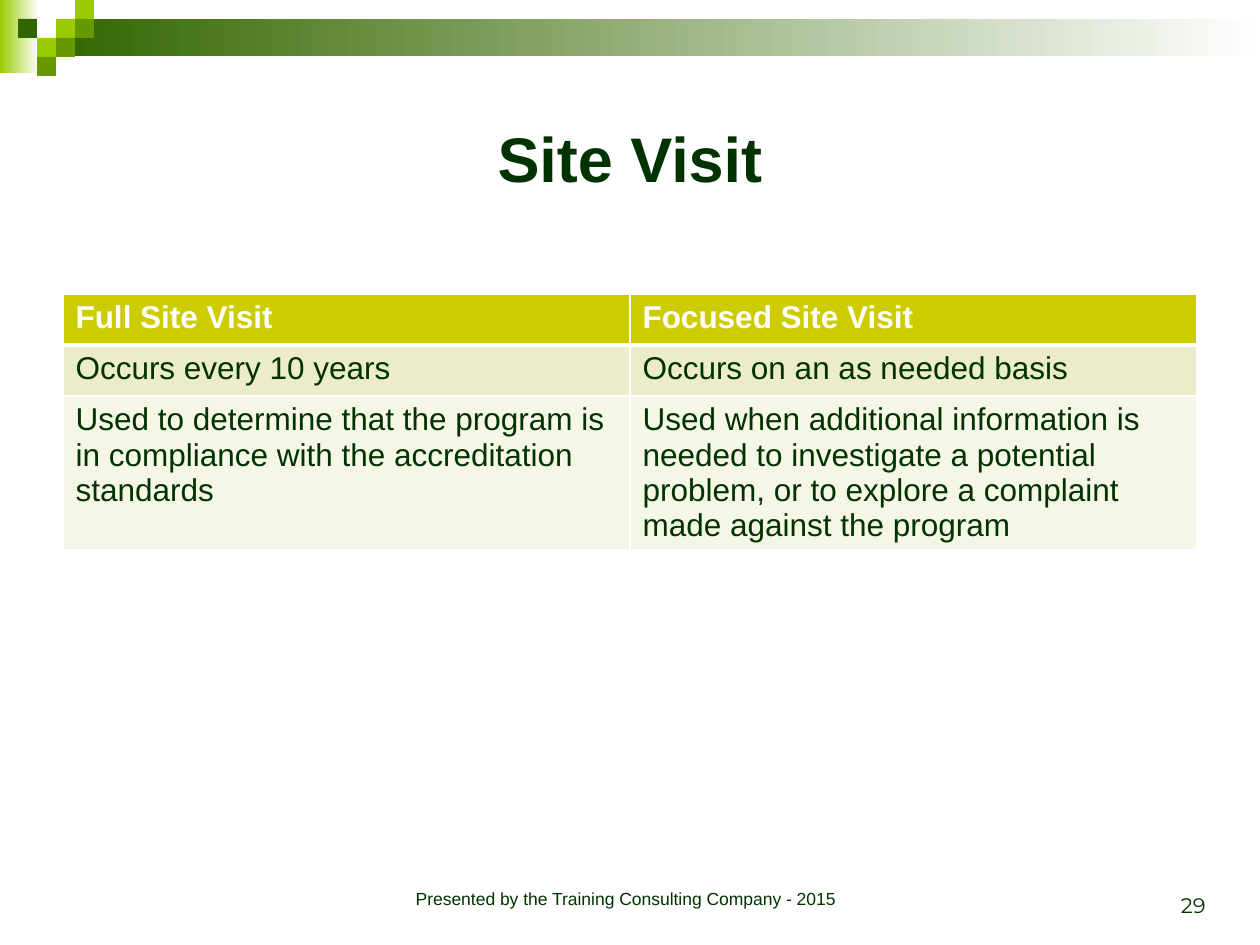
from dataclasses import dataclass

from lxml.etree import SubElement
from pptx import Presentation
from pptx.dml.color import RGBColor
from pptx.enum.shapes import MSO_SHAPE
from pptx.enum.text import MSO_ANCHOR, MSO_AUTO_SIZE, PP_ALIGN
from pptx.oxml.ns import qn
from pptx.util import Pt

EMU_PER_PX = 914400 / 126


@dataclass(frozen=True)
class Theme:
    font: str = "Arial"
    number_font: str = "Montserrat"
    ink: str = "003300"
    white: str = "FFFFFF"
    lime: str = "99CC00"
    leaf: str = "669900"
    forest: str = "336600"
    header: str = "CCCC00"
    bands: tuple = ("ECECCC", "F6F6E7")
    title_size: int = 36
    table_size: int = 18
    number_size: int = 12
    footer_size: int = 10


def px(*lengths):
    return [round(length * EMU_PER_PX) for length in lengths]


def write(frame, text, *, size, color, font, bold=False,
          align=PP_ALIGN.LEFT, anchor=MSO_ANCHOR.TOP):
    frame.word_wrap = True
    frame.vertical_anchor = anchor
    paragraph = frame.paragraphs[0]
    paragraph.alignment = align
    run = paragraph.add_run()
    run.text = text
    run.font.size = Pt(size)
    run.font.name = font
    run.font.bold = bold
    run.font.color.rgb = RGBColor.from_string(color)


class SlideBuilder:
    def __init__(self, slide, theme):
        self.slide = slide
        self.theme = theme

    def block(self, box, color, fade_to=None):
        shape = self.slide.shapes.add_shape(MSO_SHAPE.RECTANGLE, *px(*box))
        shape.shadow.inherit = False
        shape.line.fill.background()
        if fade_to is None:
            shape.fill.solid()
            shape.fill.fore_color.rgb = RGBColor.from_string(color)
            return
        shape.fill.gradient()
        shape.fill.gradient_angle = 0
        for stop, position, shade in zip(shape.fill.gradient_stops, (0, 1), (color, fade_to)):
            stop.position = position
            stop.color.rgb = RGBColor.from_string(shade)

    def title(self, text, box):
        heading = self.slide.shapes.title
        heading.left, heading.top, heading.width, heading.height = px(*box)
        heading.text_frame.auto_size = MSO_AUTO_SIZE.NONE
        write(heading.text_frame, text, size=self.theme.title_size, color=self.theme.ink,
              font=self.theme.font, bold=True, align=PP_ALIGN.CENTER, anchor=MSO_ANCHOR.MIDDLE)

    def label(self, text, box, **style):
        frame = self.slide.shapes.add_textbox(*px(*box)).text_frame
        write(frame, text, color=self.theme.ink, **style)

    def borders(self, cell, bottom_width):
        properties = cell._tc.get_or_add_tcPr()
        sides = {"lnL": 1, "lnR": 1, "lnT": 1, "lnB": bottom_width}
        for index, (side, width) in enumerate(sides.items()):
            line = SubElement(properties, qn(f"a:{side}"), w=str(Pt(width)))
            fill = SubElement(line, qn("a:solidFill"))
            SubElement(fill, qn("a:srgbClr"), val=self.theme.white)
            properties.insert(index, line)  # lines come before the fill

    def table(self, rows, box, row_heights):
        grid = self.slide.shapes.add_table(len(rows), len(rows[0]), *px(*box)).table
        for r, (texts, height) in enumerate(zip(rows, row_heights)):
            is_header = r == 0
            grid.rows[r].height = px(height)[0]
            fill = self.theme.header if is_header else self.theme.bands[(r - 1) % 2]
            for c, text in enumerate(texts):
                cell = grid.cell(r, c)
                cell.fill.solid()
                cell.fill.fore_color.rgb = RGBColor.from_string(fill)
                write(cell.text_frame, text, size=self.theme.table_size, bold=is_header,
                      color=self.theme.white if is_header else self.theme.ink,
                      font=self.theme.font)
                self.borders(cell, bottom_width=3 if is_header else 1)


def main():
    theme = Theme()
    deck = Presentation()
    deck.slide_width, deck.slide_height = px(1260, 945)
    builder = SlideBuilder(deck.slides.add_slide(deck.slide_layouts[5]), theme)

    # Fading bands along the top
    builder.block((0, 0, 39, 73), theme.lime, fade_to=theme.white)
    builder.block((57, 19, 1203, 37), theme.forest, fade_to=theme.white)

    # Stepped squares
    square = 19
    steps = [(3, 1, theme.lime), (4, 0, theme.lime), (4, 1, theme.leaf), (2, 2, theme.lime),
             (1, 1, theme.forest), (3, 2, theme.leaf), (2, 3, theme.leaf)]
    for column, row, color in steps:
        builder.block((column * square - 1, row * square, square, square), color)

    # Title and comparison table
    builder.title("Site Visit", (63, 63, 1134, 189))
    visit_types = [
        ("Full Site Visit", "Focused Site Visit"),
        ("Occurs every 10 years", "Occurs on an as needed basis"),
        ("Used to determine that the program is in compliance with the accreditation standards",
         "Used when additional information is needed to investigate a potential problem, "
         "or to explore a complaint made against the program"),
    ]
    builder.table(visit_types, (63, 294, 1134, 255), row_heights=(51, 51, 153))

    # Footer and slide number
    builder.label("Presented by the Training Consulting Company - 2015", (347, 882, 557, 42),
                  size=theme.footer_size, font=theme.font, align=PP_ALIGN.CENTER)
    builder.label("29", (924, 861, 294, 63), size=theme.number_size, font=theme.number_font,
                  align=PP_ALIGN.RIGHT, anchor=MSO_ANCHOR.BOTTOM)

    deck.save("out.pptx")


if __name__ == "__main__":
    main()
